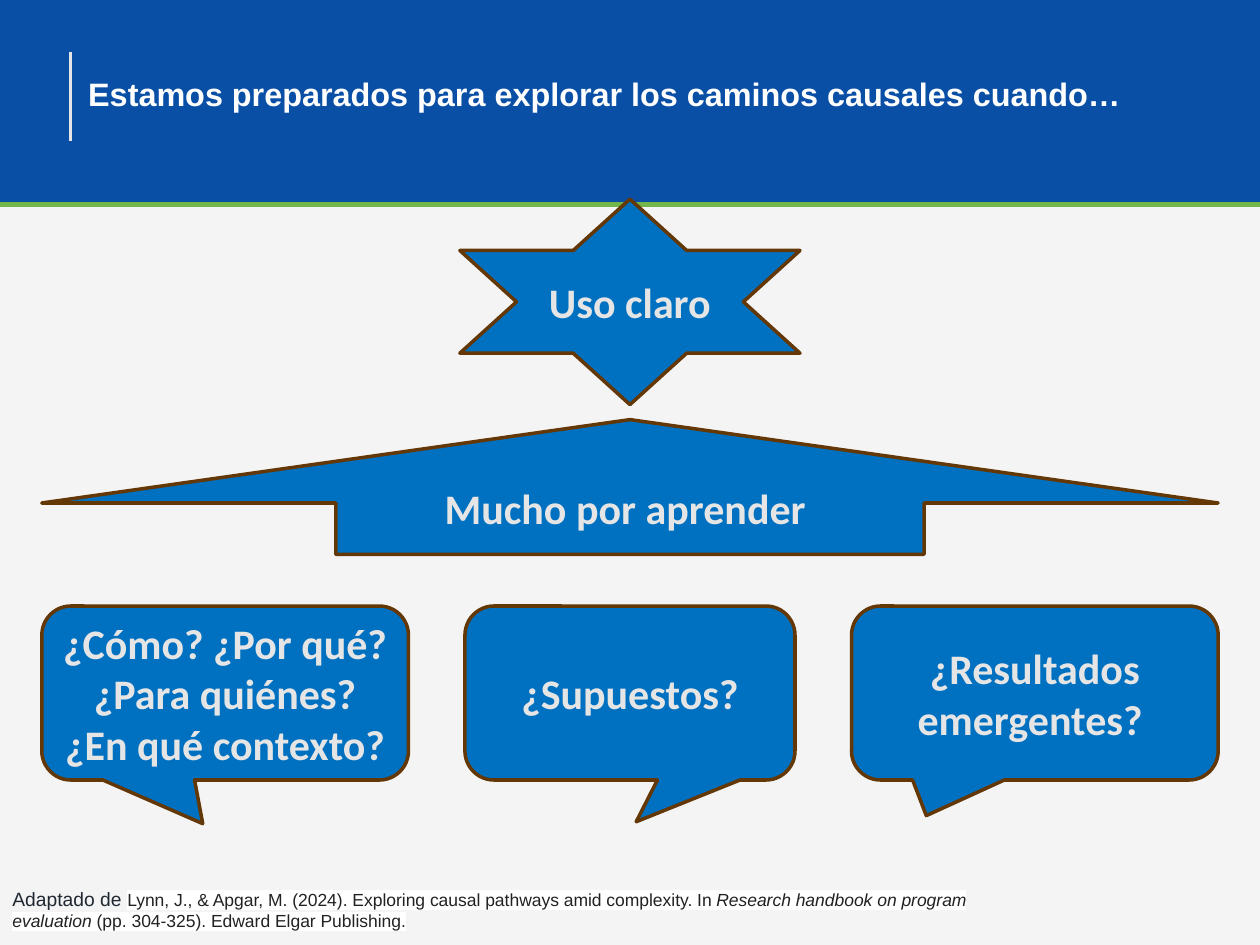
from pptx import Presentation
from pptx.dml.color import RGBColor
from pptx.enum import shapes, text
from pptx.oxml import parse_xml
from pptx.oxml.ns import nsdecls
from pptx.util import Pt

NAVY = RGBColor(0x0A, 0x4F, 0xA6)
GREEN = RGBColor(0x73, 0xB5, 0x4B)
BLUE = RGBColor(0x00, 0x70, 0xC0)
BROWN = RGBColor(0x64, 0x38, 0x06)
PALE = RGBColor(0xE5, 0xE5, 0xE5)
PAPER = RGBColor(0xF4, 0xF4, 0xF4)
WHITE = RGBColor(0xFF, 0xFF, 0xFF)
SLATE = RGBColor(0x20, 0x28, 0x32)
INK = RGBColor(0x22, 0x22, 0x22)

FORM = shapes.MSO_SHAPE
WIDE, HIGH = 720, 540
EDGE = 23.9

CALLS = [  # lines, width, pointer tip
    (["¿Cómo? ¿Por qué?", "¿Para quiénes?", "¿En qué contexto?"], 209.5, (-0.061, 0.751)),
    (["¿Supuestos?"], 188.6, (0.019, 0.74)),
    (["¿Resultados emergentes? "], 209.5, (-0.296, 0.705)),
]
CITE = [  # words, italic
    ("Lynn, J., & Apgar, M. (2024). Exploring causal pathways amid complexity. In ", False),
    ("Research handbook on program evaluation", True),
    (" (pp. 304-325). Edward Elgar Publishing.", False),
]


def style(font, name, size, color, bold=None):
    font.name, font.size, font.bold = name, Pt(size), bold
    font.color.rgb = color


def inset(frame, x, y):
    frame.margin_left = frame.margin_right = Pt(x)
    frame.margin_top = frame.margin_bottom = Pt(y)
    frame.word_wrap = True


def rule(slide, x1, y1, x2, y2, color, width):
    line = slide.shapes.add_connector(
        shapes.MSO_CONNECTOR.STRAIGHT, Pt(x1), Pt(y1), Pt(x2), Pt(y2))
    line.line.color.rgb = color
    line.line.width = Pt(width)
    line._element.spPr.append(parse_xml(f"<a:effectLst {nsdecls('a')}/>"))


def sign(slide, form, box, lines, adjust=()):
    """Outlined blue shape with centred bold lines."""
    shape = slide.shapes.add_shape(form, *map(Pt, box))
    shape.shadow.inherit = False
    shape.fill.solid()
    shape.fill.fore_color.rgb = BLUE
    shape.line.color.rgb = BROWN
    shape.line.width = Pt(2)
    for i, value in enumerate(adjust):
        shape.adjustments[i] = value
    frame = shape.text_frame
    inset(frame, 7.2, 3.6)
    frame.vertical_anchor = text.MSO_ANCHOR.MIDDLE
    frame.text = "\n".join(lines)
    for para in frame.paragraphs:
        para.alignment = text.PP_ALIGN.CENTER
        style(para.font, "Calibri", 24, PALE, True)


def header(slide, x, y, w, h):
    band = slide.shapes.add_shape(FORM.RECTANGLE, Pt(x), Pt(y), Pt(w), Pt(h))
    band.shadow.inherit = False
    band.fill.solid()
    band.fill.fore_color.rgb = NAVY
    band.line.fill.background()
    rule(slide, x, y + h - 0.5, x + w, y + h - 0.5, GREEN, 3)

    title = slide.shapes.title
    title.left, title.top = Pt(x + 46.8), Pt(y + 32.4)
    title.width, title.height = Pt(w - 87), Pt(45.4)
    frame = title.text_frame
    inset(frame, 3.6, 3.6)
    frame.auto_size = text.MSO_AUTO_SIZE.NONE
    frame.vertical_anchor = text.MSO_ANCHOR.MIDDLE
    frame.text = "Estamos preparados para explorar los caminos causales cuando…"
    para = frame.paragraphs[0]
    para.alignment = text.PP_ALIGN.LEFT
    para.line_spacing = 0.9
    style(para.font, "Arial", 18.5, WHITE, True)
    band._element.getparent().append(title._element)  # in front of the band
    rule(slide, x + 40.3, y + 29.5, x + 40.3, y + 80.6, PALE, 2)


def callouts(slide, x, y, w, h):
    gap = (w - sum(call[1] for call in CALLS)) / (len(CALLS) - 1)
    for lines, wide, tip in CALLS:
        sign(slide, FORM.ROUNDED_RECTANGULAR_CALLOUT, (x, y, wide, h), lines, (*tip, 0.167))
        x += wide + gap


def goals(slide, x, y, w, h):
    """Star above a wide arrow, both centred in the box."""
    star = 194.4
    sign(slide, FORM.UP_ARROW, (x, y + h - 77, w, 77), ["Mucho por aprender "], (0.5, 0.619))
    sign(slide, FORM.STAR_6_POINT, (x + (w - star) / 2, y, star, 117.4), ["Uso claro"])


def source(slide, x, y, w, h):
    frame = slide.shapes.add_textbox(Pt(x), Pt(y), Pt(w), Pt(h)).text_frame
    inset(frame, 7.2, 7.2)
    para = frame.paragraphs[0]
    lead = para.add_run()
    lead.text = "Adaptado de "
    style(lead.font, "Arial", 11, SLATE)
    for words, slant in CITE:
        run = para.add_run()
        run.text = words
        style(run.font, "Arial", 10, INK)
        run.font.italic = slant
        mark = parse_xml(
            f'<a:highlight {nsdecls("a")}><a:srgbClr val="{WHITE}"/></a:highlight>')
        run.font.fill._xPr.solidFill.addnext(mark) if hasattr(
            run.font.fill._xPr, "solidFill") else run._r.rPr.eg_fillProperties.addnext(mark)


def main():
    deck = Presentation()
    deck.slide_width, deck.slide_height = Pt(WIDE), Pt(HIGH)
    slide = deck.slides.add_slide(deck.slide_layouts[5])
    slide.background.fill.solid()
    slide.background.fill.fore_color.rgb = PAPER
    header(slide, 0, 0, WIDE, 117.2)
    callouts(slide, EDGE, 346.3, WIDE - 2 * EDGE, 99.4)
    goals(slide, EDGE, 113.8, WIDE - 2 * EDGE, 203)
    source(slide, 0, 499.7, 600.5, 40.3)
    deck.save("out.pptx")


if __name__ == "__main__":
    main()
